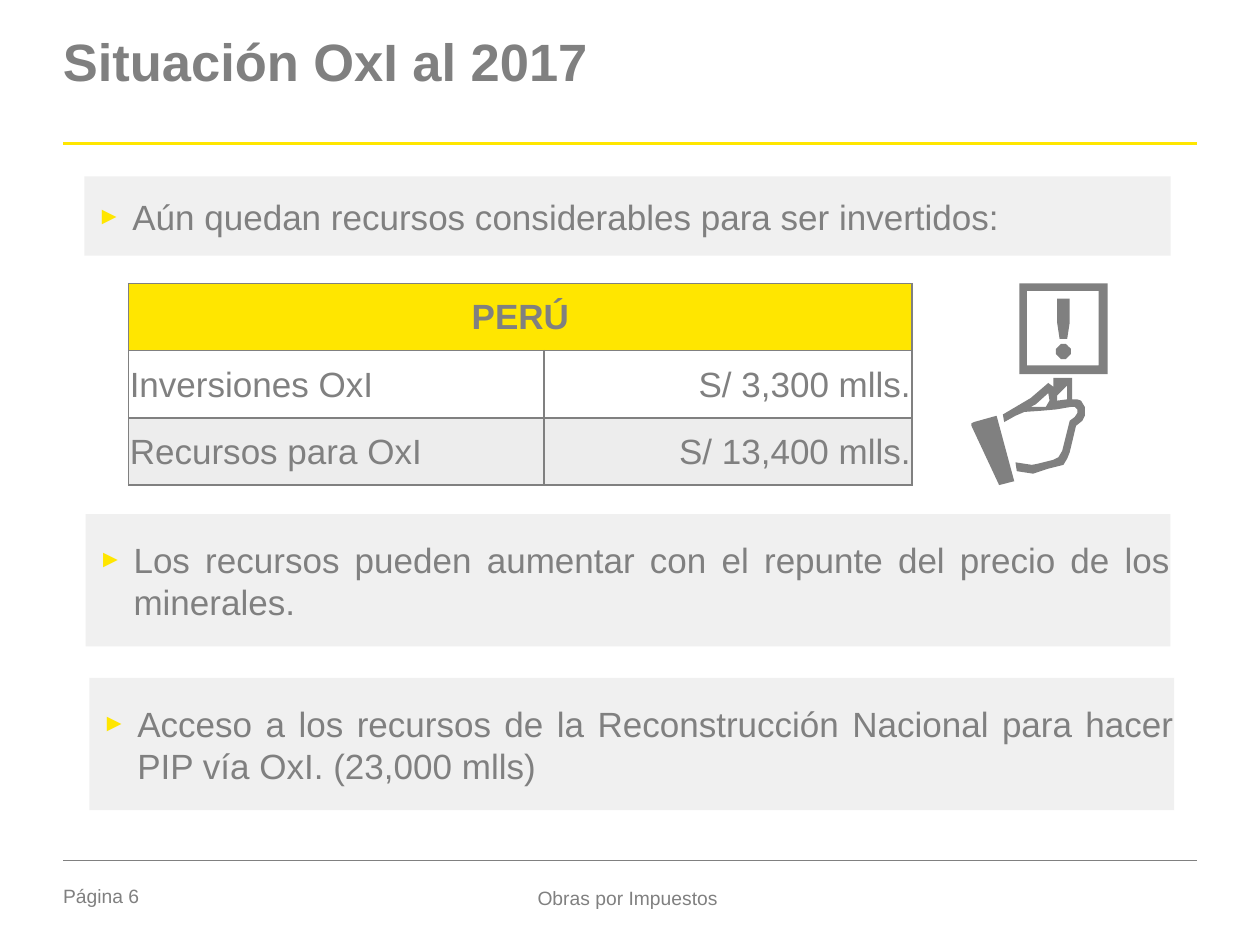
from collections import namedtuple
from math import cos, pi, sin

from lxml.etree import SubElement
from pptx import Presentation
from pptx.dml.color import RGBColor as Color
from pptx.enum.shapes import MSO_CONNECTOR as Connector, MSO_SHAPE as Shape
from pptx.enum.text import MSO_ANCHOR as Anchor, PP_ALIGN as Align
from pptx.oxml.ns import qn
from pptx.util import Inches, Pt

COLUMNS, ROWS = 100, 75
WIDTH, HEIGHT = Inches(10), Inches(7.5)
COLORS = {"text": "808080", "accent": "FFE600", "panel": "F0F0F0", "band": "EDEDED"}
ICON_COLUMNS = 108
ICON_CONTOURS = [
    [(0, 113), (0, 111), (2, 110), (20, 105), (34, 157), (22, 160)],
    [(59, 98), (62, 93), (61, 87), (51, 96), (47, 98)],
    [(76, 92), (76, 81), (68, 89), (68, 93)],
    [(65, 82), (65, 75), (80, 75), (80, 92), (84, 92), (87, 93), (90, 98), (90, 105),
     (88, 109), (83, 113), (78, 134), (76, 139), (73, 144), (69, 145), (61, 147),
     (49, 151), (36, 149), (35, 142), (48, 144), (53, 143), (65, 140), (69, 138),
     (72, 133), (78, 109), (82, 106), (84, 103), (84, 100), (82, 98), (79, 98),
     (67, 100), (56, 101), (42, 102), (35, 105), (26, 110), (25, 104), (47, 91), (61, 79)],
    [(38, 0), (108, 0), (108, 72), (38, 72)],
    [(44, 6), (101, 6), (101, 65), (44, 65)],
    [(70, 44), (68, 31), (68, 12), (78, 12), (78, 31), (76, 44)],
    [(73 + 6 * cos(step * pi / 12), 54 + 6 * sin(step * pi / 12)) for step in range(24)],
]

Box = namedtuple("Box", "left top width height")


def grid_box(column, row, columns, rows):
    across, down = WIDTH / COLUMNS, HEIGHT / ROWS
    return Box(round(column * across), round(row * down),
               round(columns * across), round(rows * down))


def color(name):
    return Color.from_string(COLORS[name])


def write(frame, text, size=20, bold=False, align=Align.LEFT, anchor=Anchor.MIDDLE, spacing=None):
    frame.word_wrap = True
    frame.margin_left = frame.margin_top = frame.margin_right = frame.margin_bottom = 0
    frame.vertical_anchor = anchor
    para = frame.paragraphs[0]
    para.alignment, para.line_spacing = align, spacing
    span = para.add_run()
    span.text = text
    font = span.font
    font.name, font.size, font.bold = "Arial", Pt(size), bold
    font.color.rgb = color("text")
    return para


def add_label(page, box, text, **style):
    write(page.shapes.add_textbox(*box).text_frame, text, **style)


def add_rule(page, box, name, weight):
    rule = page.shapes.add_connector(Connector.STRAIGHT, box.left, box.top,
                                     box.left + box.width, box.top + box.height)
    rule.line.color.rgb, rule.line.width = color(name), Pt(weight)
    SubElement(rule._element.spPr, qn("a:effectLst"))


def paint(shape, name):
    shape.shadow.inherit = False
    shape.fill.solid()
    shape.fill.fore_color.rgb = color(name)
    shape.line.fill.background()


def add_bullet(para):
    para.space_before = Pt(4)
    properties = para._p.get_or_add_pPr()
    properties.set("marL", str(Inches(0.38)))
    properties.set("indent", str(Inches(-0.28)))
    bullet_color = SubElement(properties, qn("a:buClr"))
    SubElement(bullet_color, qn("a:srgbClr"), val=COLORS["accent"])
    SubElement(properties, qn("a:buSzPct"), val="70000")
    SubElement(properties, qn("a:buFont"), typeface="Arial")
    SubElement(properties, qn("a:buChar"), char="►")


def add_panel(page, box, text):
    panel = page.shapes.add_shape(Shape.RECTANGLE, *box)
    paint(panel, "panel")
    add_bullet(write(panel.text_frame, text, align=Align.JUSTIFY))


def border(cell):
    properties = cell._tc.get_or_add_tcPr()
    for position, side in enumerate(("a:lnL", "a:lnR", "a:lnT", "a:lnB")):
        line = properties.makeelement(qn(side), w=str(Pt(1)))
        fill = SubElement(line, qn("a:solidFill"))
        SubElement(fill, qn("a:srgbClr"), val=COLORS["text"])
        properties.insert(position, line)


def add_resource_table(page, box):
    rows = [("PERÚ", ""), ("Inversiones OxI", "S/ 3,300 mlls."),
            ("Recursos para OxI", "S/ 13,400 mlls.")]
    fills = ["accent", None, "band"]
    table = page.shapes.add_table(len(rows), 2, *box).table
    table.first_row = table.horz_banding = False
    table.columns[0].width = round(box.width * 0.53)
    table.columns[1].width = box.width - table.columns[0].width
    table.cell(0, 0).merge(table.cell(0, 1))
    for row, (texts, fill) in enumerate(zip(rows, fills)):
        for column, text in enumerate(texts):
            cell = table.cell(row, column)
            if fill:
                cell.fill.solid()
                cell.fill.fore_color.rgb = color(fill)
            else:
                cell.fill.background()
            border(cell)
            if text:
                align = Align.CENTER if row == 0 else (Align.LEFT, Align.RIGHT)[column]
                write_cell(cell, text, align, bold=row == 0)


def write_cell(cell, text, align, bold):
    write(cell.text_frame, text, align=align, bold=bold)
    cell.vertical_anchor = Anchor.MIDDLE
    cell.margin_left = cell.margin_right = cell.margin_top = Inches(0.01)
    cell.margin_bottom = 0


def add_warning_hand(page, box):
    first, *others = ICON_CONTOURS
    builder = page.shapes.build_freeform(*first[0], scale=box.width / ICON_COLUMNS)
    builder.add_line_segments(first[1:], close=True)
    for contour in others:
        builder.move_to(*contour[0])
        builder.add_line_segments(contour[1:], close=True)
    paint(builder.convert_to_shape(box.left, box.top), "text")


def add_header(page, box):
    add_label(page, box, "Situación OxI al 2017", size=30, bold=True,
              anchor=Anchor.TOP, spacing=0.85)
    add_rule(page, Box(box.left, box.top + round(box.height * 0.88), box.width, 0), "accent", 1.5)


def add_footer(page, box):
    add_rule(page, box._replace(height=0), "text", 0.25)
    label_top, label_height = box.top + round(box.height * 0.46), round(box.height * 0.54)
    add_label(page, Box(box.left, label_top, round(box.width * 0.09), label_height),
              "Página 6", size=11, anchor=Anchor.TOP)
    add_label(page, Box(box.left + round(box.width * 0.324), label_top,
                        round(box.width * 0.348), label_height),
              "Obras por Impuestos", size=11, align=Align.CENTER)


def main():
    deck = Presentation()
    deck.slide_width, deck.slide_height = WIDTH, HEIGHT
    page = deck.slides.add_slide(deck.slide_layouts[6])
    add_header(page, grid_box(5, 3.1, 90, 9.4))
    add_panel(page, grid_box(6.7, 14, 86.2, 6.3),
              "Aún quedan recursos considerables para ser invertidos:")
    add_resource_table(page, grid_box(10.2, 22.5, 62.2, 16))
    add_warning_hand(page, grid_box(77.1, 22.5, 10.8, 16))
    add_panel(page, grid_box(6.8, 40.8, 86.1, 10.5),
              "Los recursos pueden aumentar con el repunte del precio de los minerales.")
    add_panel(page, grid_box(7.1, 53.8, 86.1, 10.5),
              "Acceso a los recursos de la Reconstrucción Nacional para hacer "
              "PIP vía OxI. (23,000 mlls)")
    add_footer(page, grid_box(5, 68.3, 90, 4.1))
    deck.save("out.pptx")


if __name__ == "__main__":
    main()
